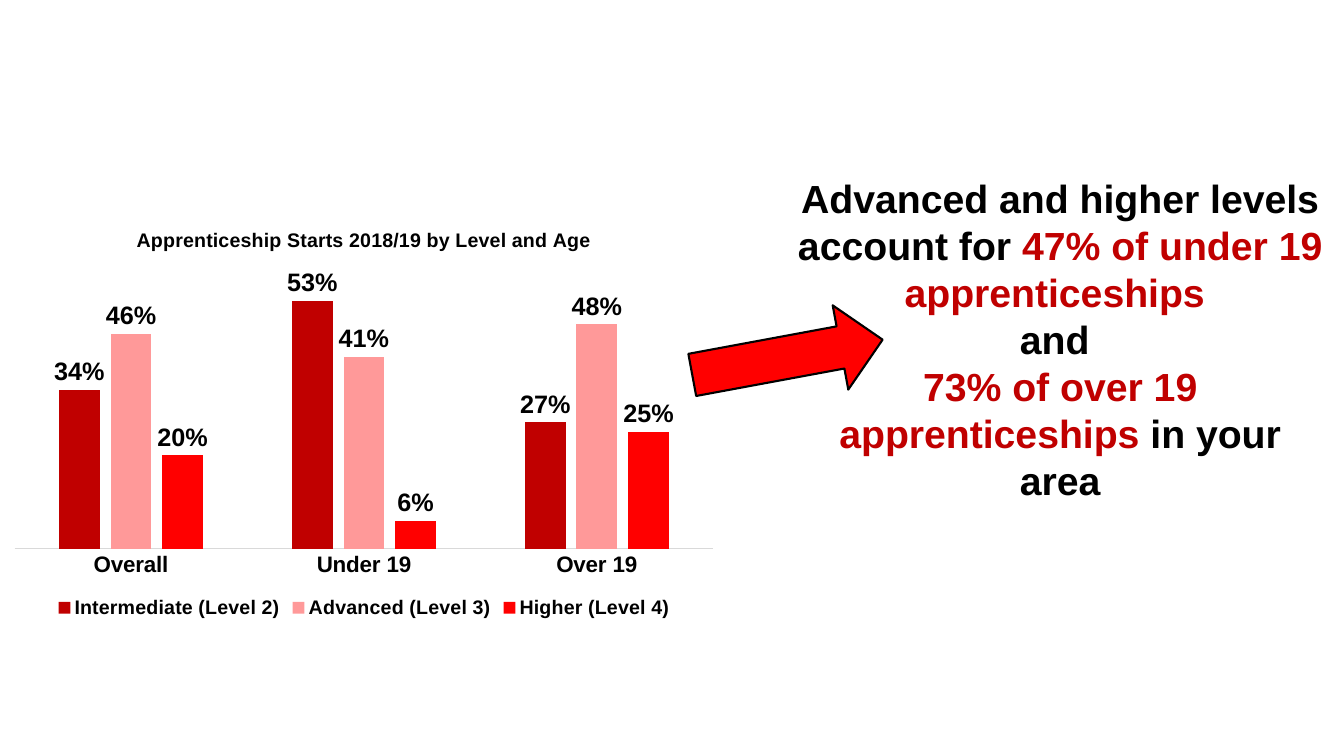
"""Build the slide on apprenticeship starts by level and age."""
from lxml import etree
from pptx import Presentation
from pptx.chart.data import CategoryChartData
from pptx.dml.color import RGBColor
from pptx.enum.chart import XL_CHART_TYPE, XL_LABEL_POSITION, XL_LEGEND_POSITION, XL_TICK_MARK
from pptx.enum.shapes import MSO_SHAPE
from pptx.enum.text import PP_ALIGN
from pptx.oxml.ns import qn
from pptx.util import Inches, Pt

COLORS = {"black": "000000", "dark": "C00000", "pink": "FF9999", "red": "FF0000", "grey": "D9D9D9"}


def rgb(name):
    return RGBColor.from_string(COLORS[name])


def style(font, size, color="black"):
    font.name = "Arial"
    font.size = Pt(size)
    font.bold = True
    font.color.rgb = rgb(color)


prs = Presentation()
prs.slide_width, prs.slide_height = Inches(13.33), Inches(7.5)
s = prs.slides.add_slide(prs.slide_layouts[6])

message = [
    [("Advanced and higher levels account for ", "black"), ("47% of under 19 apprenticeships ", "dark")],
    [("and ", "black")],
    [("73% of over 19 apprenticeships", "dark"), (" in your area", "black")],
]
tf = s.shapes.add_textbox(Inches(7.8), Inches(1.68), Inches(5.43), Inches(3.4)).text_frame
tf.word_wrap = True
for i, runs in enumerate(message):
    p = tf.add_paragraph() if i else tf.paragraphs[0]
    p.alignment = PP_ALIGN.CENTER
    for text, color in runs:
        r = p.add_run()
        r.text = text
        style(r.font, 28, color)

arrow = s.shapes.add_shape(MSO_SHAPE.RIGHT_ARROW, Inches(6.85), Inches(3.12), Inches(1.92), Inches(0.85))
arrow.rotation = 349.5
arrow.shadow.inherit = False
arrow.fill.solid()
arrow.fill.fore_color.rgb = rgb("red")
arrow.line.color.rgb = rgb("black")
arrow.line.width = Pt(1.5)

levels = [
    ("Intermediate (Level 2)", (0.34, 0.53, 0.27), "dark"),
    ("Advanced (Level 3)", (0.46, 0.41, 0.48), "pink"),
    ("Higher (Level 4)", (0.2, 0.06, 0.25), "red"),
]
data = CategoryChartData(number_format="0%")
data.categories = ["Overall", "Under 19", "Over 19"]
for name, values, color in levels:
    data.add_series(name, values)
chart = s.shapes.add_chart(
    XL_CHART_TYPE.COLUMN_CLUSTERED, Inches(0), Inches(2.09), Inches(7.22), Inches(4.09), data
).chart
style(chart.font, 16)

chart.has_title = True
r = chart.chart_title.text_frame.paragraphs[0].add_run()
r.text = "Apprenticeship Starts 2018/19 by Level and Age"
style(r.font, 14)
chart.chart_title.include_in_layout = False

chart.has_legend = True
chart.legend.position = XL_LEGEND_POSITION.BOTTOM
chart.legend.include_in_layout = False
style(chart.legend.font, 14)

axis = chart.category_axis
axis.major_tick_mark = XL_TICK_MARK.NONE
axis.format.line.color.rgb = rgb("grey")
axis.format.line.width = Pt(0.75)
style(axis.tick_labels.font, 16)
axis = chart.value_axis
axis.visible = False
axis.has_major_gridlines = False
axis.minimum_scale, axis.maximum_scale = 0, 0.6

plot = chart.plots[0]
plot.gap_width, plot.overlap = 219, -27
plot.vary_by_categories = False
for series, (name, values, color) in zip(plot.series, levels):
    series.format.fill.solid()
    series.format.fill.fore_color.rgb = rgb(color)
    labels = series.data_labels
    labels.show_value = True
    labels.position = XL_LABEL_POSITION.OUTSIDE_END
    labels.number_format = "0%"
    labels.number_format_is_linked = False
    style(labels.font, 18)

area = chart._chartSpace.chart.plotArea
for old in area.findall(qn("c:layout")):
    area.remove(old)
layout = etree.Element(qn("c:layout"))
area.insert(0, layout)
manual = etree.SubElement(layout, qn("c:manualLayout"))
for tag, val in [("layoutTarget", "inner"), ("xMode", "edge"), ("yMode", "edge"),
                 ("x", "0.02"), ("y", "0.14"), ("w", "0.96"), ("h", "0.68")]:
    etree.SubElement(manual, qn(f"c:{tag}")).set("val", val)

prs.save("out.pptx")
